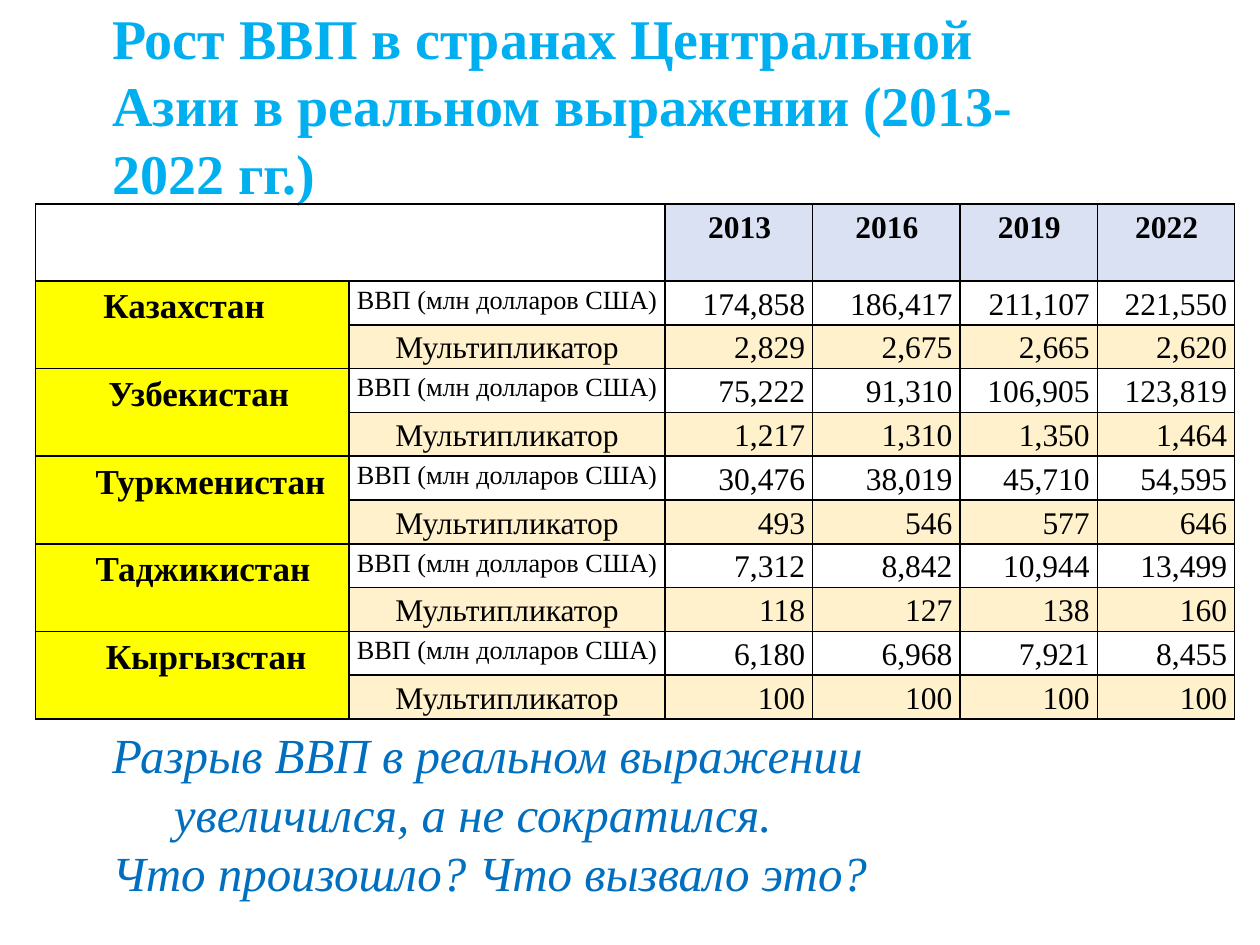
from lxml import etree
from pptx import Presentation
from pptx.dml import color
from pptx.enum import text as t
from pptx.oxml import ns
from pptx.util import Inches, Pt

FONT = "Times New Roman"
YEARS = ["2013", "2016", "2019", "2022"]
YEAR_INDENTS = [0.34, 0.34, 0.3, 0.3]
COL_WIDTHS = [2.49, 2.51, 1.17, 1.17, 1.09, 1.09]
HEADER_HEIGHT = 0.61
TABLE_HEIGHT = 4.09
CELL_MARGIN = 0.06
COUNTRIES = [
    ("Казахстан", 0.54, ["174,858", "186,417", "211,107", "221,550"],
     ["2,829", "2,675", "2,665", "2,620"]),
    ("Узбекистан", 0.58, ["75,222", "91,310", "106,905", "123,819"],
     ["1,217", "1,310", "1,350", "1,464"]),
    ("Туркменистан", 0.48, ["30,476", "38,019", "45,710", "54,595"],
     ["493", "546", "577", "646"]),
    ("Таджикистан", 0.48, ["7,312", "8,842", "10,944", "13,499"],
     ["118", "127", "138", "160"]),
    ("Кыргызстан", 0.56, ["6,180", "6,968", "7,921", "8,455"],
     ["100", "100", "100", "100"]),
]


def rgb(value):
    return color.RGBColor.from_string(value)


class Deck:
    def __init__(self, width, height):
        self.prs = Presentation()
        self.prs.slide_width = Inches(width)
        self.prs.slide_height = Inches(height)
        self.s = self.prs.slides.add_slide(self.prs.slide_layouts[5])

    def run(self, p, content, size, hue="000000", bold=False, italic=False):
        r = p.add_run()
        r.text = content
        f = r.font
        f.name, f.size, f.bold, f.italic = FONT, Pt(size), bold, italic
        f.color.rgb = rgb(hue)

    def indent(self, p, left, first=0):
        p_pr = p._p.get_or_add_pPr()
        p_pr.set("marL", str(Inches(left)))
        p_pr.set("indent", str(Inches(first)))

    def frame(self, sp):
        tf = sp.text_frame
        tf.word_wrap = True
        tf.auto_size = t.MSO_AUTO_SIZE.NONE
        tf.vertical_anchor = t.MSO_ANCHOR.TOP
        tf.margin_left = tf.margin_right = tf.margin_bottom = 0
        tf.margin_top = Inches(0.01)
        return tf

    def title(self, content, x, y, w, h):
        sp = self.s.shapes.title
        sp.left, sp.top, sp.width, sp.height = map(Inches, (x, y, w, h))
        p = self.frame(sp).paragraphs[0]
        p.alignment = t.PP_ALIGN.LEFT
        self.indent(p, 0.01)
        self.run(p, content, 32, "00AFEF", bold=True)

    def text(self, lines, x, y, w, h):
        sp = self.s.shapes.add_textbox(*map(Inches, (x, y, w, h)))
        tf = self.frame(sp)
        for i, (content, left, first) in enumerate(lines):
            p = tf.add_paragraph() if i else tf.paragraphs[0]
            self.indent(p, left, first)
            self.run(p, content, 28, "006FC0", italic=True)

    def table(self, rows, x, y, w, h):
        frame = self.s.shapes.add_table(rows, len(COL_WIDTHS), *map(Inches, (x, y, w, h)))
        tbl = frame.table
        for col, width in zip(tbl.columns, COL_WIDTHS):
            col.width = Inches(width)
        row_height = (h - HEADER_HEIGHT) / (rows - 1)
        for i, row in enumerate(tbl.rows):
            row.height = Inches(row_height if i else HEADER_HEIGHT)
        for cell in tbl.iter_cells():
            cell.margin_top = cell.margin_bottom = cell.margin_left = cell.margin_right = 0
            self.borders(cell)
            cell.fill.background()
        return tbl

    def borders(self, cell):
        tc_pr = cell._tc.get_or_add_tcPr()
        for side in ("a:lnL", "a:lnR", "a:lnT", "a:lnB"):
            ln = etree.SubElement(tc_pr, ns.qn(side), w=str(Pt(1)))
            fill = etree.SubElement(ln, ns.qn("a:solidFill"))
            etree.SubElement(fill, ns.qn("a:srgbClr"), val="000000")

    def cell(self, cell, content, size=18, fill=None, align=t.PP_ALIGN.LEFT, left=0, bold=False):
        if fill:
            cell.fill.solid()
            cell.fill.fore_color.rgb = rgb(fill)
        p = cell.text_frame.paragraphs[0]
        p.alignment = align
        p.line_spacing = 1.17
        if left:
            self.indent(p, left)
        if align == t.PP_ALIGN.RIGHT:
            cell.margin_right = Inches(CELL_MARGIN)
        self.run(p, content, size, bold=bold)


def main():
    deck = Deck(10, 7.5)
    tbl = deck.table(1 + 2 * len(COUNTRIES), 0.28, 1.62, sum(COL_WIDTHS), TABLE_HEIGHT)
    tbl.cell(0, 0).merge(tbl.cell(0, 1))
    for j, (year, left) in enumerate(zip(YEARS, YEAR_INDENTS), 2):
        deck.cell(tbl.cell(0, j), year, fill="D9E1F3", left=left, bold=True)
    for i, (country, left, gdp, multiplier) in enumerate(COUNTRIES):
        top = 1 + 2 * i
        tbl.cell(top, 0).merge(tbl.cell(top + 1, 0))
        deck.cell(tbl.cell(top, 0), country, 20, "FFFF00", left=left, bold=True)
        series = [("ВВП (млн долларов США)", 15, None, gdp),
                  ("Мультипликатор", 18, "FFF1CC", multiplier)]
        for row, (label, size, fill, values) in enumerate(series, top):
            deck.cell(tbl.cell(row, 1), label, size, fill, t.PP_ALIGN.CENTER)
            for j, value in enumerate(values, 2):
                deck.cell(tbl.cell(row, j), value, 18, fill, t.PP_ALIGN.RIGHT)
    deck.title("Рост ВВП в странах Центральной Азии в реальном выражении (2013-2022 гг.)",
               0.88, 0.02, 7.74, 1.62)
    deck.text([("Разрыв ВВП в реальном выражении увеличился, а не сократился.", 0.5, -0.49),
               ("Что произошло? Что вызвало это?", 0.01, 0)], 0.88, 5.74, 7.55, 1.43)
    deck.prs.save("out.pptx")


if __name__ == "__main__":
    main()
